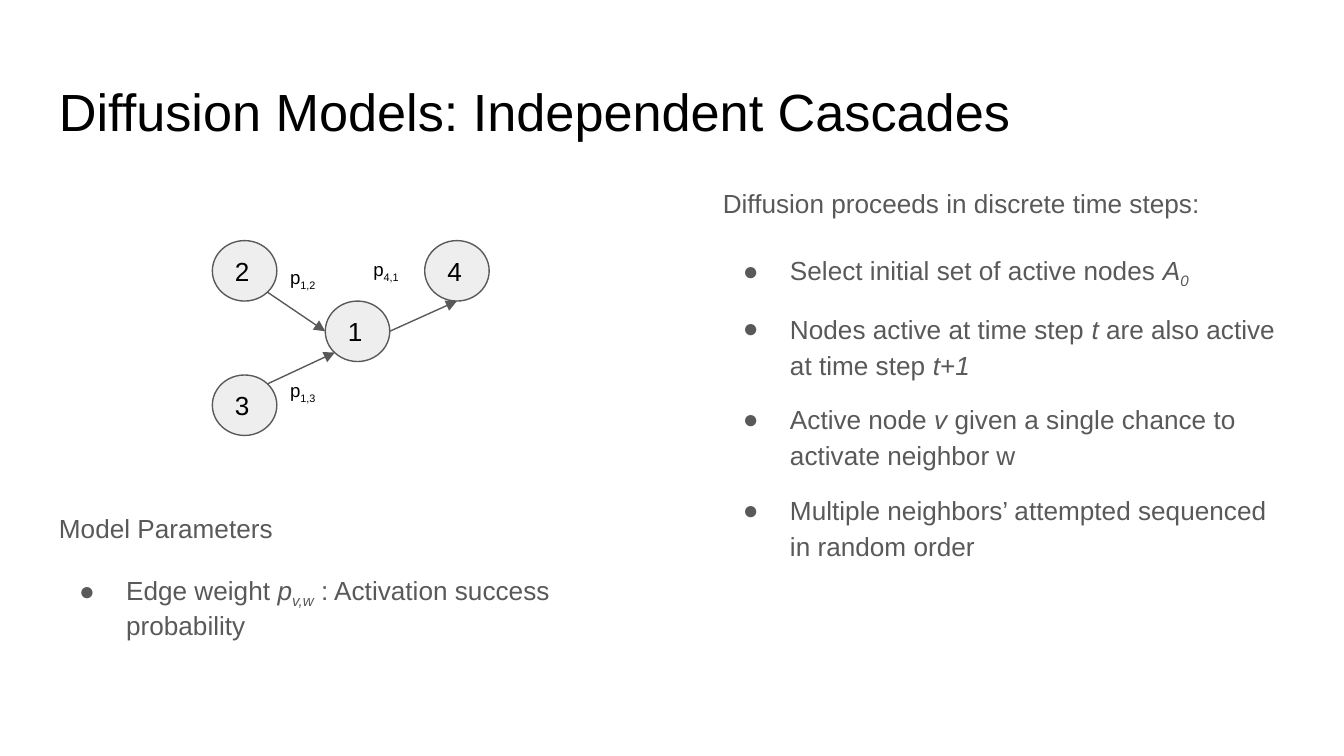
from lxml.etree import SubElement
from pptx import Presentation
from pptx.dml.color import RGBColor
from pptx.enum.shapes import MSO_CONNECTOR, MSO_SHAPE
from pptx.enum.text import MSO_ANCHOR, PP_ALIGN
from pptx.oxml.ns import qn
from pptx.util import Inches, Pt

THEME = {
    "font": "Arial",
    "ink": RGBColor(0x00, 0x00, 0x00),
    "gray": RGBColor(0x59, 0x59, 0x59),
    "node": RGBColor(0xEE, 0xEE, 0xEE),
    "title": 28, "body": 14, "label": 10, "line": 0.75,
}

# Content: a run is (text, style), with style "" plain, "i" italic, "s" subscript
TITLE = [("Diffusion Models: Independent Cascades", "")]

# Paragraph: runs, bulleted, line spacing, space before
PARAMETERS = [
    ([("Model Parameters", "")], False, 1.15, 0),
    ([("Edge weight", ""), (" p", "i"), ("v,w", "is"),
      (" : Activation success probability", "")], True, 1.0, 16),
]
STEPS = [
    ([("Diffusion proceeds in discrete time steps:", "")], False, 1.15, 0),
    ([("Select initial set of active nodes ", ""), ("A", "i"), ("0", "is")],
     True, 1.15, 16),
    ([("Nodes active at time step ", ""), ("t ", "i"),
      ("are also active at time step ", ""), ("t+1", "i")], True, 1.15, 10),
    ([("Active node ", ""), ("v", "i"),
      (" given a single chance to activate neighbor w", "")], True, 1.15, 10),
    ([("Multiple neighbors’ attempted sequenced in random order", "")],
     True, 1.15, 10),
]

# Graph: top-left corners in inches; every node and label has the same size
NODE_SIZE = (0.48, 0.45)
NODES = {"2": (1.58, 1.79), "1": (2.42, 2.24), "3": (1.58, 2.79), "4": (3.16, 1.79)}
LABELS = {"1,3": (2.06, 2.69), "1,2": (2.06, 1.85), "4,1": (2.68, 1.79)}
EDGES = [("2", "bottom right", "1", "left"),
         ("3", "top right", "1", "bottom left"),
         ("1", "right", "4", "bottom")]

# Points on an ellipse as fractions of its width and height
SITES = {"left": (0, 0.5), "right": (1, 0.5), "bottom": (0.5, 1),
         "top right": (0.85, 0.15), "bottom right": (0.85, 0.85),
         "bottom left": (0.15, 0.85)}


def write_runs(paragraph, runs, size, color):
    for text, style in runs:
        run = paragraph.add_run()
        run.text = text
        run.font.name = THEME["font"]
        run.font.size = Pt(size)
        run.font.color.rgb = color
        run.font.italic = "i" in style
        if "s" in style:
            run._r.get_or_add_rPr().set("baseline", "-25000")


def prepare_frame(shape, anchor):
    frame = shape.text_frame
    frame.word_wrap = True
    frame.vertical_anchor = anchor
    frame.margin_left = frame.margin_right = Inches(0.1)
    frame.margin_top = frame.margin_bottom = Inches(0.1)
    frame.paragraphs[0].alignment = PP_ALIGN.LEFT
    return frame


def add_text(slide, box, runs, size, anchor=MSO_ANCHOR.TOP):
    shape = slide.shapes.add_textbox(*map(Inches, box))
    frame = prepare_frame(shape, anchor)
    write_runs(frame.paragraphs[0], runs, size, THEME["ink"])


def add_bullet(paragraph):
    properties = paragraph._p.get_or_add_pPr()
    properties.set("marL", str(Inches(0.5)))
    properties.set("indent", str(Inches(-0.35)))
    color = SubElement(properties, qn("a:buClr"))
    SubElement(color, qn("a:srgbClr")).set("val", str(THEME["gray"]))
    SubElement(properties, qn("a:buFont")).set("typeface", THEME["font"])
    SubElement(properties, qn("a:buChar")).set("char", "●")


def add_body(slide, box, content):
    frame = prepare_frame(slide.shapes.add_textbox(*map(Inches, box)), MSO_ANCHOR.TOP)
    for index, (runs, bulleted, spacing, before) in enumerate(content):
        paragraph = frame.add_paragraph() if index else frame.paragraphs[0]
        paragraph.line_spacing = spacing
        paragraph.space_before = Pt(before)
        if bulleted:
            add_bullet(paragraph)
        write_runs(paragraph, runs, THEME["body"], THEME["gray"])


def add_node(slide, name, corner):
    node = slide.shapes.add_shape(MSO_SHAPE.OVAL, *map(Inches, corner + NODE_SIZE))
    node.shadow.inherit = False
    node.fill.solid()
    node.fill.fore_color.rgb = THEME["node"]
    node.line.color.rgb = THEME["gray"]
    node.line.width = Pt(THEME["line"])
    frame = prepare_frame(node, MSO_ANCHOR.MIDDLE)
    write_runs(frame.paragraphs[0], [(name, "")], THEME["body"], THEME["ink"])


def site_point(name, site):
    return [Inches(start + length * fraction) for start, length, fraction
            in zip(NODES[name], NODE_SIZE, SITES[site])]


def add_edge(slide, source, source_site, target, target_site):
    edge = slide.shapes.add_connector(
        MSO_CONNECTOR.STRAIGHT,
        *site_point(source, source_site), *site_point(target, target_site))
    edge.line.color.rgb = THEME["gray"]
    edge.line.width = Pt(THEME["line"])
    SubElement(edge.line._get_or_add_ln(), qn("a:tailEnd")).set("type", "triangle")
    SubElement(edge._element.spPr, qn("a:effectLst"))


def main():
    # Widescreen slide, 16 to 9
    presentation = Presentation()
    presentation.slide_width = Inches(10)
    presentation.slide_height = Inches(10 * 9 / 16)
    slide = presentation.slides.add_slide(presentation.slide_layouts[6])

    # Title and text columns
    add_text(slide, (0.34, 0.49, 9.32, 0.63), TITLE, THEME["title"])
    add_body(slide, (0.34, 3.68, 4.37, 1.32), PARAMETERS)
    add_body(slide, (5.28, 1.26, 4.37, 3.94), STEPS)

    # Cascade graph
    for name, corner in NODES.items():
        add_node(slide, name, corner)
    for edge in EDGES:
        add_edge(slide, *edge)
    for subscript, corner in LABELS.items():
        add_text(slide, corner + NODE_SIZE, [("p", ""), (subscript, "s")],
                 THEME["label"], MSO_ANCHOR.MIDDLE)

    presentation.save("out.pptx")


if __name__ == "__main__":
    main()
